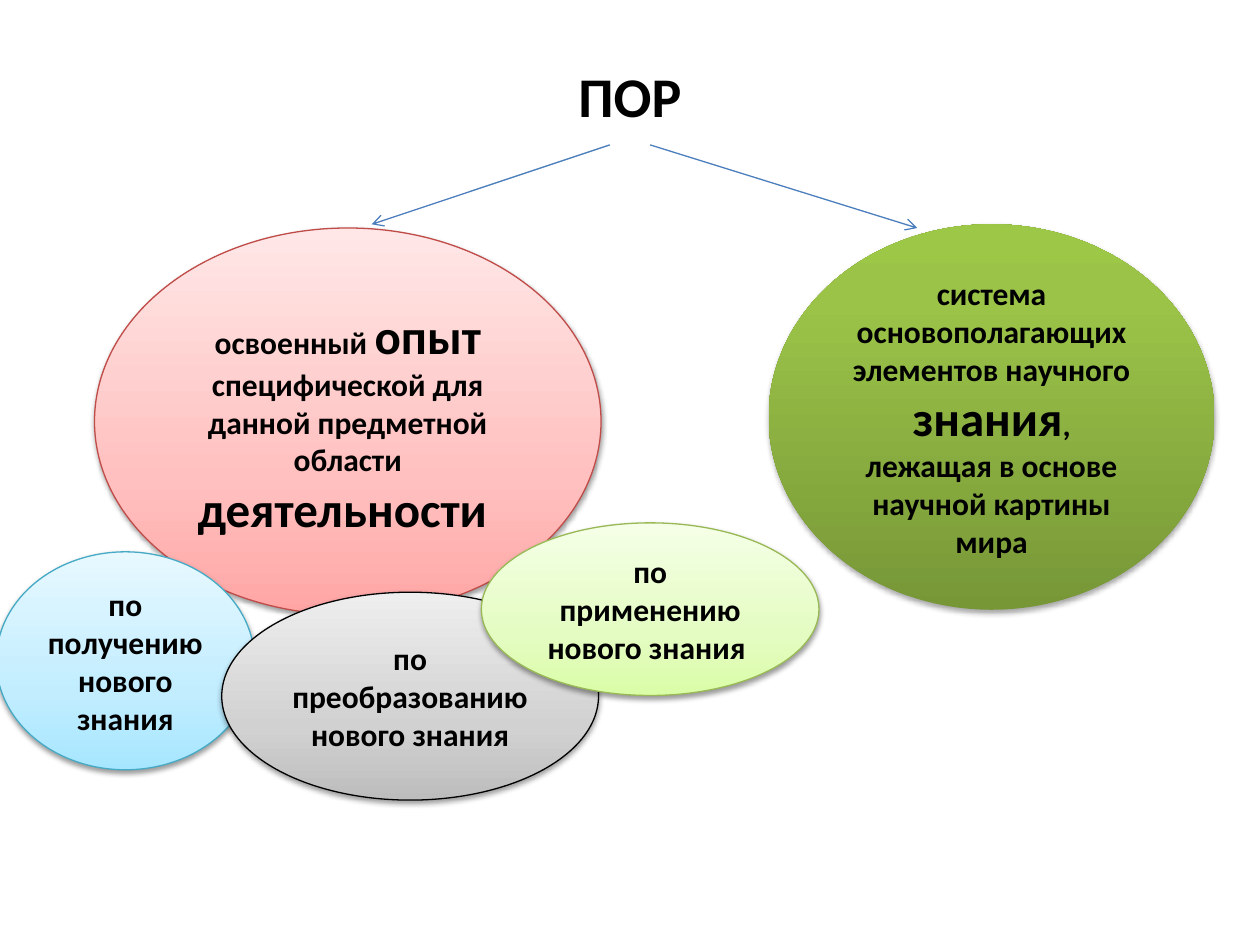
from typing import NamedTuple, Optional

import pptx
import pptx.dml.color
import pptx.enum.shapes
import pptx.enum.text
import pptx.oxml
import pptx.oxml.ns
import pptx.util
from copy import deepcopy

Inches, Pt = pptx.util.Inches, pptx.util.Pt
ALIGN = pptx.enum.text.PP_ALIGN
ANCHOR = pptx.enum.text.MSO_ANCHOR
SMALL, BIG, TITLE = 18, 28, 32
NS = pptx.oxml.ns.nsdecls("a")


class Run(NamedTuple):
    text: str
    size: int = SMALL


class Bubble(NamedTuple):
    box: tuple[float, float, float, float]
    stops: tuple[tuple[float, str], ...]
    line: Optional[str]
    runs: tuple[Run, ...]
    shadow: tuple[int, float] = (38, 1.6)  # opacity %, distance pt


class Arrow(NamedTuple):
    start: tuple[float, float]
    end: tuple[float, float]


def soft(bottom: str, middle: str, top: str) -> tuple[tuple[float, str], ...]:
    return (0, bottom), (0.35, middle), (1, top)


ARROWS = [
    Arrow((4.84, 1.15), (2.95, 1.78)),
    Arrow((5.16, 1.15), (7.28, 1.81)),
]

BUBBLES = [
    Bubble((0.75, 1.81, 4.02, 3.07), soft("FFA6A5", "FFC0BF", "FFE7E7"), "BF4C48",
           (Run("освоенный "), Run("опыт", BIG),
            Run(" специфической для данной предметной области "),
            Run("деятельности ", BIG))),
    Bubble((6.1, 1.78, 3.54, 3.06),
           ((0, "779737"), (0.8, "9BC348"), (1, "9DC746")), None,
           (Run("система основополагающих элементов научного "),
            Run("знания", BIG),
            Run(", лежащая в основе научной картины мира")),
           (35, 1.8)),
    Bubble((-0.03, 4.38, 2.05, 1.73), soft("A7E6FF", "C1EDFF", "E7F8FF"), "46AAC5",
           (Run("по получению нового знания"),)),
    Bubble((1.76, 4.7, 2.99, 1.65), soft("BDBDBD", "D1D1D1", "EEEEEE"), "000000",
           (Run("по преобразованию нового знания"),)),
    Bubble((3.82, 4.15, 2.68, 1.37), soft("DAFDA7", "E4FCC2", "F5FFE7"), "98B955",
           (Run("по применению нового знания "),)),
]


def rgb(value: str) -> pptx.dml.color.RGBColor:
    return pptx.dml.color.RGBColor.from_string(value)


def set_attrs(obj, **values) -> None:
    for name, value in values.items():
        setattr(obj, name, value)


def write(tf, runs: tuple[Run, ...], anchor) -> None:
    set_attrs(tf, word_wrap=True, vertical_anchor=anchor,
              auto_size=pptx.enum.text.MSO_AUTO_SIZE.NONE)
    p = tf.paragraphs[0]
    p.alignment = ALIGN.CENTER
    for run in runs:
        r = p.add_run()
        r.text = run.text
        set_attrs(r.font, name="Calibri", size=Pt(run.size), bold=True)
        r.font.color.rgb = rgb("000000")


def draw_arrow(slide, arrow: Arrow) -> None:
    sp = slide.shapes.add_connector(
        pptx.enum.shapes.MSO_CONNECTOR.STRAIGHT,
        *(Inches(v) for v in arrow.start + arrow.end))
    sp.line.color.rgb = rgb("4B7EBC")
    sp.line.width = Pt(0.75)
    spPr = sp._element.spPr
    ln = spPr.find(pptx.oxml.ns.qn("a:ln"))
    ln.append(pptx.oxml.parse_xml(f'<a:tailEnd {NS} type="arrow"/>'))
    spPr.append(pptx.oxml.parse_xml(f"<a:effectLst {NS}/>"))


def fill_gradient(sp, stops: tuple[tuple[float, str], ...]) -> None:
    sp.fill.gradient()
    sp.fill.gradient_angle = 90
    gs_list = sp._element.spPr.find(".//" + pptx.oxml.ns.qn("a:gsLst"))
    while len(gs_list) < len(stops):
        gs_list.append(deepcopy(gs_list[-1]))
    for stop, (position, color) in zip(sp.fill.gradient_stops, stops):
        stop.position = position
        stop.color.rgb = rgb(color)


def add_shadow(sp, opacity: int, distance: float) -> None:
    sp.shadow.inherit = False
    effects = sp._element.spPr.find(pptx.oxml.ns.qn("a:effectLst"))
    effects.append(pptx.oxml.parse_xml(
        f'<a:outerShdw {NS} blurRad="{Pt(3.1)}" dist="{Pt(distance)}" '
        f'dir="5400000" rotWithShape="0"><a:srgbClr val="000000">'
        f'<a:alpha val="{opacity * 1000}"/></a:srgbClr></a:outerShdw>'))


def draw_bubble(slide, bubble: Bubble) -> None:
    sp = slide.shapes.add_shape(pptx.enum.shapes.MSO_SHAPE.OVAL,
                                *(Inches(v) for v in bubble.box))
    fill_gradient(sp, bubble.stops)
    if bubble.line:
        sp.line.color.rgb = rgb(bubble.line)
        sp.line.width = Pt(0.75)
    else:
        sp.line.fill.background()
    add_shadow(sp, *bubble.shadow)
    write(sp.text_frame, bubble.runs, ANCHOR.MIDDLE)


def main() -> None:
    prs = pptx.Presentation()
    set_attrs(prs, slide_width=Inches(10), slide_height=Inches(7.5))
    slide = prs.slides.add_slide(prs.slide_layouts[5])

    # Title
    title = slide.shapes.title
    set_attrs(title, left=Inches(0.5), top=Inches(0.44),
              width=Inches(9), height=Inches(6.26))
    write(title.text_frame, (Run("ПОР", TITLE),), ANCHOR.TOP)

    # Arrows from the title to the two main bubbles
    for arrow in ARROWS:
        draw_arrow(slide, arrow)

    # Bubbles, back to front
    for bubble in BUBBLES:
        draw_bubble(slide, bubble)

    prs.save("out.pptx")


if __name__ == "__main__":
    main()
